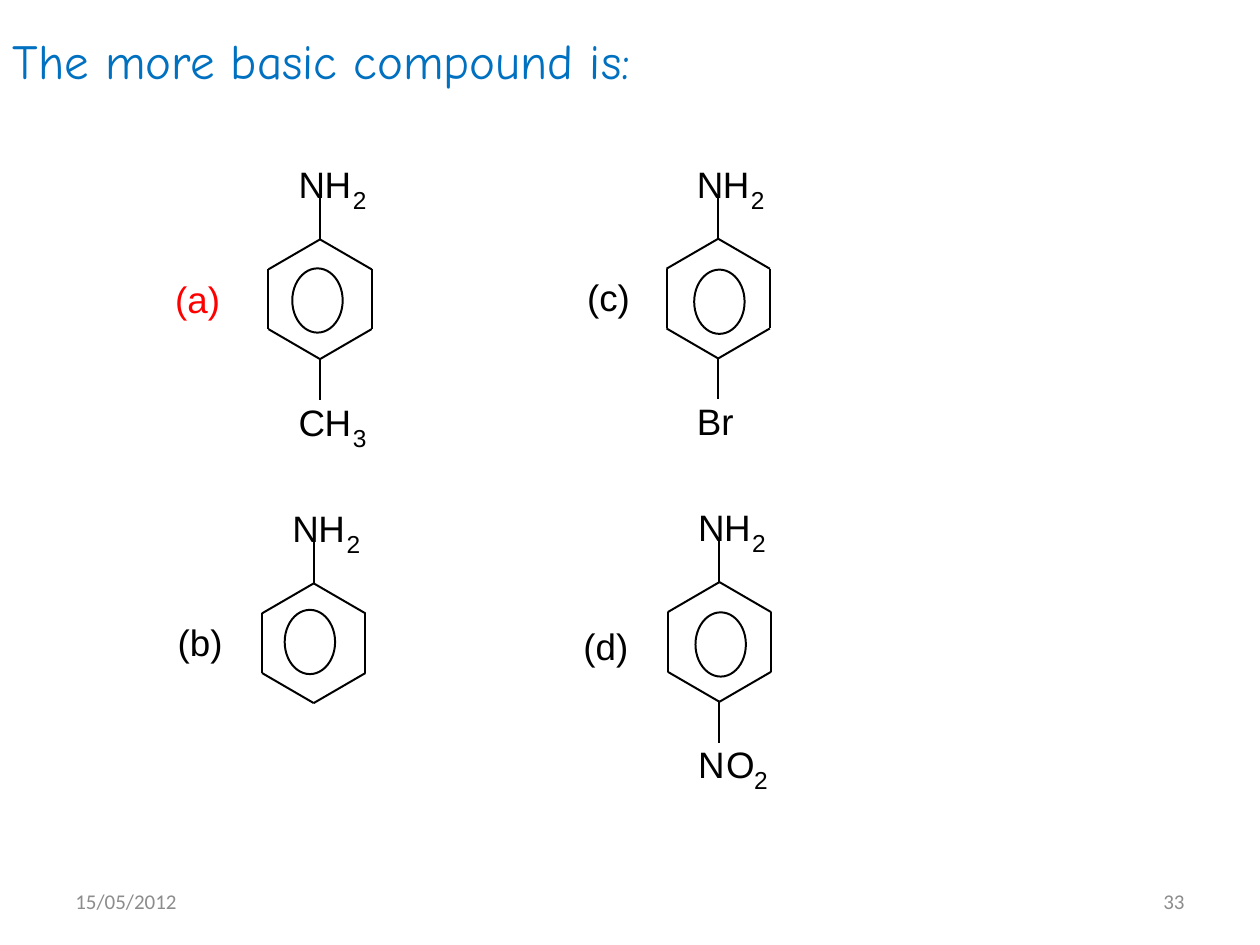
from lxml import etree
from pptx import Presentation, util as u
from pptx.dml.color import RGBColor
from pptx.enum import shapes, text
from pptx.oxml.ns import qn

deck = Presentation()
deck.slide_width, deck.slide_height = u.Inches(10), u.Inches(7.5)
slide = deck.slides.add_slide(deck.slide_layouts[5])

# Grid of 100 columns by 75 rows
col, row = deck.slide_width / 100, deck.slide_height / 75


def grid(*vals):
    return [round(v * (row if i % 2 else col)) for i, v in enumerate(vals)]


def write(box, words, size, color, font="Arial", pad=0):
    frame = box.text_frame
    frame.word_wrap = True
    frame.margin_left = frame.margin_right = u.Inches(pad)
    frame.margin_top = frame.margin_bottom = u.Inches(pad / 2)
    frame.text = words
    run = frame.paragraphs[0].runs[0].font
    run.size, run.name = u.Pt(size), font
    run.color.rgb = RGBColor.from_string(color)
    return frame


# Title
title = slide.shapes.title
title.left, title.top, title.width, title.height = grid(0, 1.9, 54.2, 10.4)
frame = write(title, "The more basic compound is:", 28, "0070C0", "Comic Neue", 0.1)
frame.vertical_anchor = text.MSO_ANCHOR.TOP
frame.auto_size = text.MSO_AUTO_SIZE.NONE
frame.paragraphs[0].alignment = text.PP_ALIGN.LEFT

# Date and slide number
for left, words, side in ((71.7, "33", text.PP_ALIGN.RIGHT),
                          (5, "15/05/2012", text.PP_ALIGN.LEFT)):
    box = slide.shapes.add_textbox(*grid(left, 69.5, 23.3, 4))
    frame = write(box, words, 12, "8C8C8C", "Calibri", 0.1)
    frame.vertical_anchor = text.MSO_ANCHOR.MIDDLE
    frame.paragraphs[0].alignment = side

# Hexagon corners and bonds, measured from the ring centre
hexa = [(0, -4.75), (4.1, -2.37), (4.1, 2.37), (0, 4.75), (-4.1, 2.37), (-4.1, -2.37)]
sides = list(zip(hexa, hexa[1:] + hexa[:1]))
up, down = ((0, -4.75), (0, -8)), ((0, 4.75), (0, 8))

# Label, its colour and place; ring centre; circle centre; lower group
acids = [
    ("(a)", "FF0000", (13.9, 22), (25.4, 23.75), (25.2, 23.85), ("C", "H", "3")),
    ("(b)", "000000", (14.1, 49.2), (24.9, 51.05), (24.6, 50.95), ()),
    ("(c)", "000000", (46.6, 21.8), (57, 23.7), (57.1, 23.95), ("Br",)),
    ("(d)", "000000", (46.3, 49.5), (57.1, 50.95), (57.2, 51.15), ("N", "O", "2")),
]

for label, color, spot, (x, y), (cx, cy), tail in acids:
    group = slide.shapes.add_group_shape().shapes

    # Ring and bonds
    for (x1, y1), (x2, y2) in sides + [up] + ([down] if tail else []):
        bond = group.add_connector(shapes.MSO_CONNECTOR.STRAIGHT,
                                   *grid(x + x1, y + y1, x + x2, y + y2))
        bond.line.width = u.Pt(1.13)
        bond.line.color.rgb = RGBColor.from_string("000000")
        etree.SubElement(bond._element.spPr, qn("a:effectLst"))

    # Circle inside the ring
    oval = group.add_shape(shapes.MSO_SHAPE.OVAL, *grid(cx - 2, cy - 2.55, 4, 5.1))
    oval.shadow.inherit = False
    oval.fill.background()
    oval.line.width = u.Pt(1.13)
    oval.line.color.rgb = RGBColor.from_string("000000")

    # Atoms, with digits set small and low
    for top, atoms in ((y - 10.9, ("N", "H", "2")), (y + 7.95, tail)):
        for i, atom in enumerate(atoms):
            low = atom.isdigit()
            left = x - 1.7 + i * (2.23 if "O" in atoms else 2.15 if low else 2.07)
            size = (1.9, 2.5) if low else (4.2, 3.9)
            box = group.add_textbox(*grid(left, top + 1.85 * low, *size))
            write(box, atom, 14 if low else 21, "000000")

    # Choice label
    write(group.add_textbox(*grid(*spot, 4.8, 3.9)), label, 21, color)

deck.save("out.pptx")
